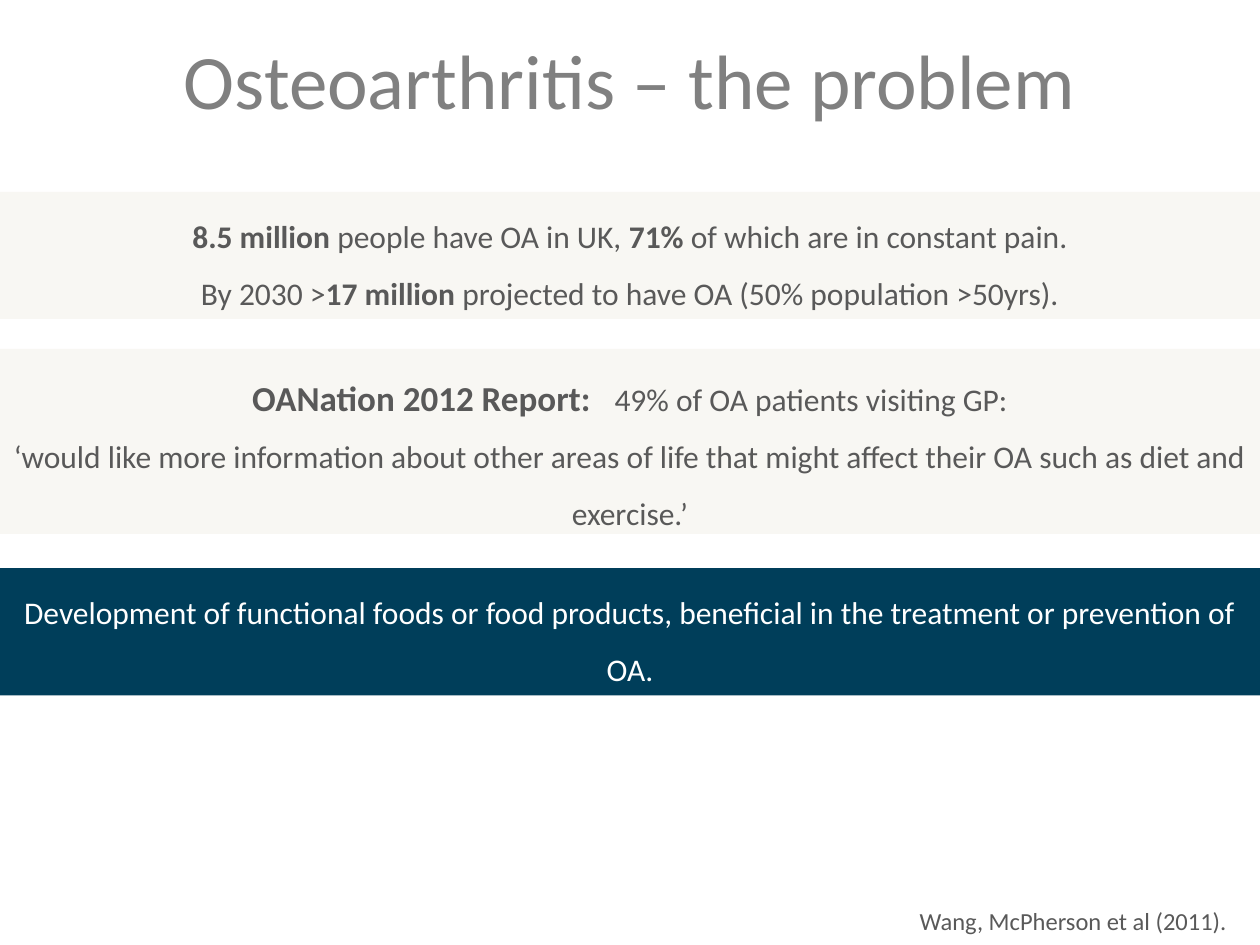
from pptx import Presentation
from pptx.dml.color import RGBColor
from pptx.enum.shapes import MSO_SHAPE
from pptx.enum.text import MSO_ANCHOR, PP_ALIGN
from pptx.util import Pt

GREY, PALE, NAVY, WHITE = "595959", "F8F7F3", "003E5A", "FFFFFF"


def color(value):
    return RGBColor.from_string(value)


def run(text, **fmt):
    return text, fmt


class Deck:
    """Holds the text style and the current slide."""

    def __init__(self, prs, font="Calibri", size=18):
        self.s = prs.slides.add_slide(prs.slide_layouts[6])
        self.width = prs.slide_width.pt
        self.font, self.size = font, size

    def add_text(self, p, text, ink=GREY, size=None, bold=False, spacing=0):
        r = p.add_run()
        r.text = text
        r.font.name = self.font
        r.font.size = Pt(size or self.size)
        r.font.bold = bold
        r.font.color.rgb = color(ink)
        if spacing:
            r._r.get_or_add_rPr().set("spc", str(spacing * 100))

    def label(self, text, x, y, w, h, align=PP_ALIGN.LEFT,
              anchor=MSO_ANCHOR.TOP, wrap=True, **fmt):
        tf = self.s.shapes.add_textbox(Pt(x), Pt(y), Pt(w), Pt(h)).text_frame
        tf.word_wrap = wrap
        tf.vertical_anchor = anchor
        p = tf.paragraphs[0]
        p.alignment = align
        self.add_text(p, text, **fmt)

    def band(self, y, h, fill, lines):
        sp = self.s.shapes.add_shape(MSO_SHAPE.RECTANGLE, 0, Pt(y), Pt(self.width), Pt(h))
        sp.shadow.inherit = False
        sp.fill.solid()
        sp.fill.fore_color.rgb = color(fill)
        sp.line.fill.background()
        tf = sp.text_frame
        tf.word_wrap = True
        tf.vertical_anchor = MSO_ANCHOR.TOP
        for i, line in enumerate(lines):
            p = tf.add_paragraph() if i else tf.paragraphs[0]
            p.alignment = PP_ALIGN.CENTER
            p.line_spacing = 1.5
            for text, fmt in line:
                self.add_text(p, text, **fmt)


def main():
    prs = Presentation()
    prs.slide_width, prs.slide_height = Pt(720), Pt(540)
    deck = Deck(prs)
    deck.label("Osteoarthritis – the problem", 36, 0, 648, 90, align=PP_ALIGN.CENTER,
               anchor=MSO_ANCHOR.MIDDLE, ink="808080", size=44)
    deck.band(109.6, 72.7, PALE, [
        [run("8.5 million", bold=True), run(" people have OA in UK, "),
         run("71%", bold=True), run(" of which are in constant pain.")],
        [run("By 2030 >"), run("17 million", bold=True),
         run(" projected to have OA (50% population >50yrs).")],
    ])
    deck.band(199.4, 105.8, PALE, [
        [run("OANation 2012 Report:", size=20, bold=True),
         run(" ", size=20, bold=True, spacing=9),
         run("49% of OA patients visiting GP:")],
        [run("‘would like more information about other areas of life that might "
             "affect their OA such as diet and exercise.’")],
    ])
    deck.band(324.7, 72.7, NAVY, [
        [run("Development of functional foods or food products, beneficial in the "
             "treatment or prevention of OA.", ink=WHITE)],
    ])
    deck.label("Wang, McPherson et al (2011).", 518.4, 514.1, 195.1, 24.2, wrap=False, size=14)
    prs.save("out.pptx")


if __name__ == "__main__":
    main()
